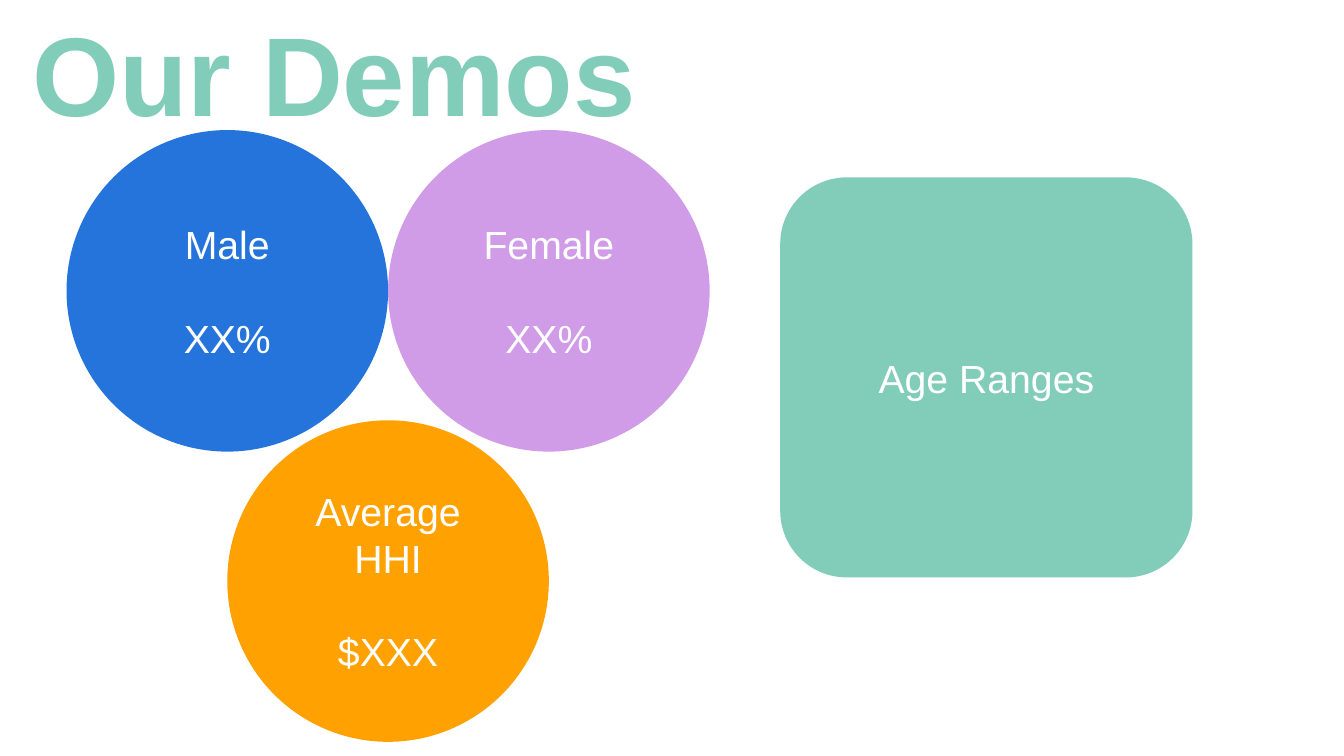
from pptx import Presentation
from pptx.dml.color import RGBColor
from pptx.enum.shapes import MSO_SHAPE
from pptx.enum.text import MSO_ANCHOR, MSO_AUTO_SIZE, PP_ALIGN
from pptx.util import Pt

OVAL = MSO_SHAPE.OVAL
ROUNDED = MSO_SHAPE.ROUNDED_RECTANGLE
TOP, MIDDLE = MSO_ANCHOR.TOP, MSO_ANCHOR.MIDDLE
LEFT, CENTER = PP_ALIGN.LEFT, PP_ALIGN.CENTER
NO_AUTOFIT = MSO_AUTO_SIZE.NONE

FONT = "Arial"
MINT, WHITE = "82CDBA", "FFFFFF"
LABEL_LINE = 33.5
DIAMETER = 229.7
CIRCLES_LEFT, CIRCLES_TOP = 47.5, 92.9
LOWER_TOP = 300.2


def rgb(value):
    return RGBColor.from_string(value)


def add_run(p, text, size, color, bold=False):
    r = p.add_run()
    r.text = text
    r.font.name = FONT
    r.font.size = Pt(size)
    r.font.bold = bold
    r.font.color.rgb = rgb(color)


def set_title(s, text):
    sp = s.shapes.title
    sp.left, sp.top, sp.width, sp.height = Pt(15.8), Pt(10.1), Pt(603.4), Pt(246.2)
    tf = sp.text_frame
    tf.word_wrap = True
    tf.auto_size = NO_AUTOFIT
    tf.vertical_anchor = TOP
    p = tf.paragraphs[0]
    p.alignment = LEFT
    p.line_spacing = Pt(85.5)
    add_run(p, text, 80, MINT, bold=True)


def add_label_shape(s, kind, left, top, width, height, fill, lines):
    """Add a filled shape whose lines are centred, one blank line apart."""
    sp = s.shapes.add_shape(kind, Pt(left), Pt(top), Pt(width), Pt(height))
    sp.shadow.inherit = False
    sp.fill.solid()
    sp.fill.fore_color.rgb = rgb(fill)
    sp.line.fill.background()
    tf = sp.text_frame
    tf.word_wrap = True
    tf.vertical_anchor = MIDDLE
    for i, line in enumerate(lines):
        p = tf.add_paragraph() if i else tf.paragraphs[0]
        p.alignment = CENTER
        p.line_spacing = Pt(LABEL_LINE)
        if i:
            p.space_before = Pt(LABEL_LINE)
        add_run(p, line, 28, WHITE)


def main():
    prs = Presentation()
    prs.slide_width, prs.slide_height = Pt(960), Pt(540)
    s = prs.slides.add_slide(prs.slide_layouts[5])
    set_title(s, "Our Demos")

    # Two touching circles, with the third centred below their meeting point
    circles = [
        (0, CIRCLES_TOP, "2474DB", ["Male", "XX%"]),
        (1, CIRCLES_TOP, "D09CE7", ["Female", "XX%"]),
        (0.5, LOWER_TOP, "FFA100", ["Average HHI", "$XXX"]),
    ]
    for column, top, fill, lines in circles:
        left = CIRCLES_LEFT + column * DIAMETER
        add_label_shape(s, OVAL, left, top, DIAMETER, DIAMETER, fill, lines)

    add_label_shape(s, ROUNDED, 557.3, 126.7, 294.5, 285.8, MINT, ["Age Ranges"])
    prs.save("out.pptx")


if __name__ == "__main__":
    main()
